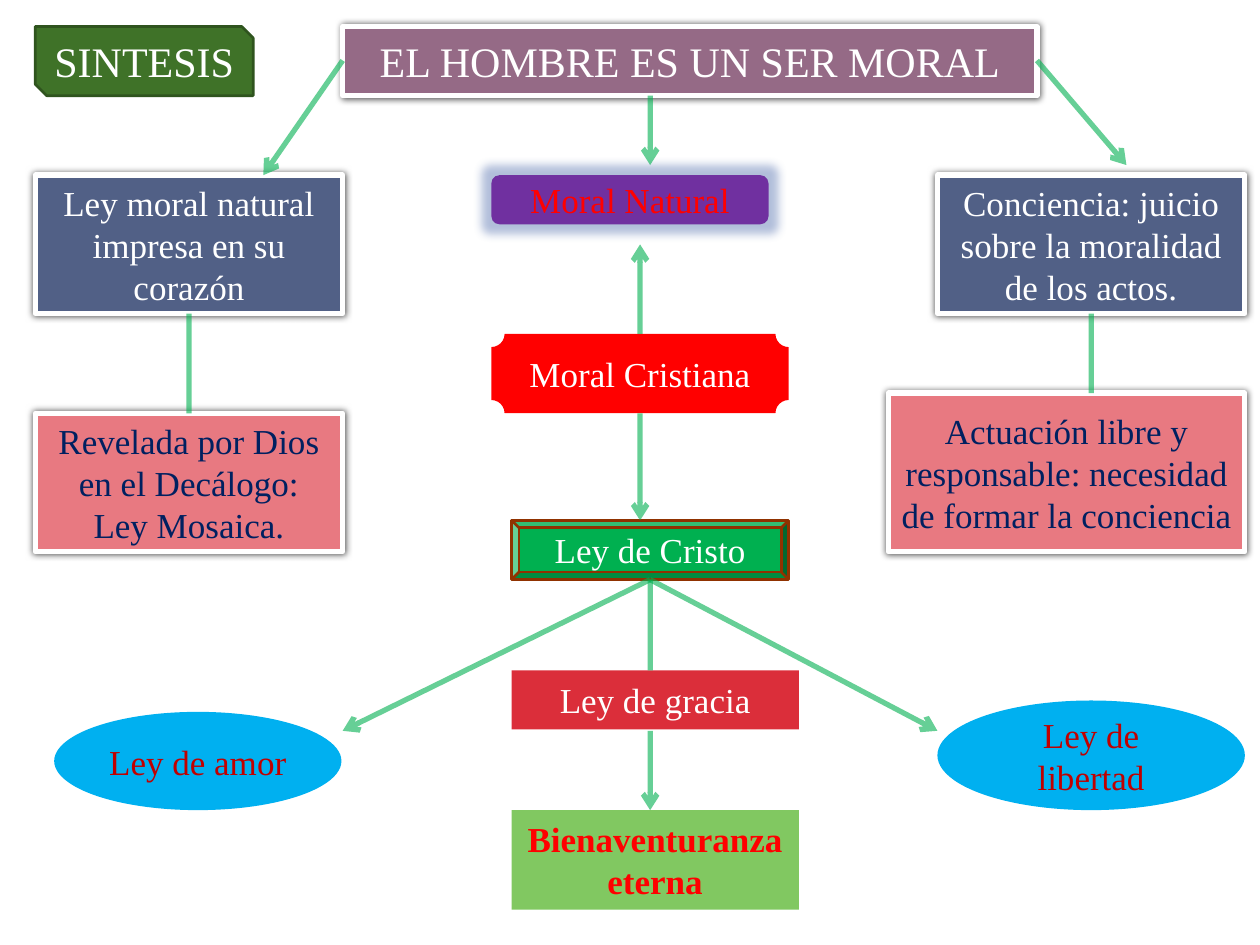
from lxml import etree
from pptx import Presentation
from pptx.dml.color import RGBColor
from pptx.enum import shapes, text
from pptx.oxml import ns
from pptx.util import Inches, Pt

FONT = "Times New Roman"
WHITE = RGBColor(0xFF, 0xFF, 0xFF)
RED = RGBColor(0xFF, 0x00, 0x00)
DARK_RED = RGBColor(0xC0, 0x00, 0x00)
CRIMSON = RGBColor(0xDB, 0x2E, 0x3A)
PINK = RGBColor(0xE8, 0x79, 0x81)
MAUVE = RGBColor(0x95, 0x6A, 0x86)
PURPLE = RGBColor(0x70, 0x30, 0xA0)
NAVY = RGBColor(0x00, 0x20, 0x60)
SLATE = RGBColor(0x51, 0x60, 0x86)
SKY = RGBColor(0x00, 0xB0, 0xF0)
GREEN = RGBColor(0x00, 0xB0, 0x50)
LIGHT_GREEN = RGBColor(0x81, 0xC8, 0x61)
FOREST = RGBColor(0x3F, 0x72, 0x28)
DARK_FOREST = RGBColor(0x2F, 0x54, 0x1E)
BROWN = RGBColor(0x90, 0x32, 0x00)
GLOW_BLUE = RGBColor(0x3F, 0x5F, 0xA5)

KIND = shapes.MSO_SHAPE
TITLE = ("EL HOMBRE ES UN SER MORAL", (2.72, 0.21, 5.51, 0.55))

# wording, kind, (left, top, width, height), fill, text colour
FRAMED_BOXES = [
    ("Ley moral natural impresa en su corazón", KIND.RECTANGLE,
     (0.28, 1.39, 2.44, 1.1), SLATE, WHITE),
    ("Conciencia: juicio sobre la moralidad de los actos.", KIND.RECTANGLE,
     (7.44, 1.39, 2.44, 1.1), SLATE, WHITE),
    ("Revelada por Dios en el Decálogo: Ley Mosaica.", KIND.RECTANGLE,
     (0.28, 3.28, 2.44, 1.1), PINK, NAVY),
    ("Actuación libre y responsable: necesidad de formar la conciencia",
     KIND.RECTANGLE, (7.05, 3.12, 2.83, 1.26), PINK, NAVY),
]
PLAIN_BOXES = [
    ("Moral Cristiana", KIND.PLAQUE, (3.9, 2.65, 2.36, 0.63), RED, WHITE),
    ("Ley de gracia", KIND.RECTANGLE, (4.06, 5.32, 2.28, 0.47), CRIMSON, WHITE),
    ("Ley de amor", KIND.OVAL, (0.43, 5.65, 2.28, 0.78), SKY, DARK_RED),
    ("Ley de libertad", KIND.OVAL, (7.44, 5.56, 2.44, 0.87), SKY, DARK_RED),
]
SYNTHESIS = ("SINTESIS", KIND.SNIP_2_DIAG_RECTANGLE,
             (0.28, 0.21, 1.73, 0.55), FOREST, WHITE)
NATURAL = ("Moral Natural", KIND.ROUNDED_RECTANGLE,
           (3.9, 1.39, 2.2, 0.39), PURPLE, RED)
CHRIST = ("Ley de Cristo", KIND.BEVEL, (4.06, 4.13, 2.2, 0.47), GREEN, WHITE)
BEATITUDE = ("Bienaventuranza eterna", KIND.RECTANGLE,
             (4.06, 6.43, 2.28, 0.79), LIGHT_GREEN, RED)

CHRIST_FOOT = (5.16, 4.6)
ARROWS = [
    ((2.72, 0.48), (2.09, 1.39)),
    ((8.23, 0.48), (8.94, 1.31)),
    ((5.16, 0.76), (5.16, 1.31)),
    ((5.08, 2.65), (5.08, 1.94)),
    ((5.08, 3.28), (5.08, 4.13)),
    ((5.16, 5.8), (5.16, 6.43)),
    (CHRIST_FOOT, (2.72, 5.8)),
    (CHRIST_FOOT, (7.44, 5.8)),
]
PLAIN_LINES = [
    (CHRIST_FOOT, (5.16, 5.32)),
    ((1.5, 2.49), (1.5, 3.28)),
    ((8.66, 2.49), (8.66, 3.12)),
]


def add_child(parent, tag, **attributes):
    return etree.SubElement(parent, ns.qn(tag), attributes)


def set_opacity(fill_owner, percent):
    for color in fill_owner.iter(ns.qn("a:srgbClr")):
        add_child(color, "a:alpha", val=str(percent * 1000))


def add_effect(shape, tag, color, percent, **attributes):
    effects = shape.element.spPr.find(ns.qn("a:effectLst"))
    effect = add_child(effects, tag, **attributes)
    add_child(effect, "a:srgbClr", val=str(color))
    set_opacity(effect, percent)


def style_box(shape, wording, fill, color, size=20, bold=False):
    shape.shadow.inherit = False
    shape.fill.solid()
    shape.fill.fore_color.rgb = fill
    shape.line.fill.background()
    frame = shape.text_frame
    frame.text = wording
    frame.word_wrap = True
    frame.auto_size = text.MSO_AUTO_SIZE.NONE
    frame.vertical_anchor = text.MSO_ANCHOR.MIDDLE
    paragraph = frame.paragraphs[0]
    paragraph.alignment = text.PP_ALIGN.CENTER
    font = paragraph.font
    font.name, font.size, font.bold = FONT, Pt(size), bold
    font.color.rgb = color


def add_box(slide, box, **options):
    wording, kind, place, fill, color = box
    shape = slide.shapes.add_shape(kind, *map(Inches, place))
    style_box(shape, wording, fill, color, **options)
    return shape


def outline(shape, color, width):
    shape.line.color.rgb = color
    shape.line.width = Pt(width)


def frame_in_white(shape):
    """Thick white border with a soft dark halo."""
    outline(shape, WHITE, 3)
    add_effect(shape, "a:outerShdw", RGBColor(0, 0, 0), 64,
               blurRad=str(Pt(4)), dist="0", dir="0")


def place_title(slide):
    wording, place = TITLE
    title = slide.shapes.title
    title.left, title.top, title.width, title.height = map(Inches, place)
    geometry = add_child(title.element.spPr, "a:prstGeom", prst="snip2DiagRect")
    add_child(geometry, "a:avLst")
    style_box(title, wording, MAUVE, WHITE, size=24)
    frame_in_white(title)


def add_line(slide, start, end, arrow=False):
    line = slide.shapes.add_connector(
        shapes.MSO_CONNECTOR.STRAIGHT, *map(Inches, start + end))
    outline(line, GREEN, 3)
    properties = line.element.spPr
    stroke = properties.find(ns.qn("a:ln"))
    set_opacity(stroke, 60)
    if arrow:
        add_child(stroke, "a:tailEnd", type="arrow")
    add_child(properties, "a:effectLst")


def main():
    presentation = Presentation()
    presentation.slide_width = Inches(10)
    presentation.slide_height = Inches(7.5)
    slide = presentation.slides.add_slide(presentation.slide_layouts[5])

    place_title(slide)
    outline(add_box(slide, SYNTHESIS, size=24), DARK_FOREST, 1.5)
    for box in FRAMED_BOXES:
        frame_in_white(add_box(slide, box))
    natural = add_box(slide, NATURAL)
    add_effect(natural, "a:glow", GLOW_BLUE, 40, rad=str(Pt(11)))
    for box in PLAIN_BOXES:
        add_box(slide, box)
    outline(add_box(slide, CHRIST), BROWN, 1.5)
    add_box(slide, BEATITUDE, bold=True)

    for start, end in ARROWS:
        add_line(slide, start, end, arrow=True)
    for start, end in PLAIN_LINES:
        add_line(slide, start, end)
    presentation.save("out.pptx")


if __name__ == "__main__":
    main()
